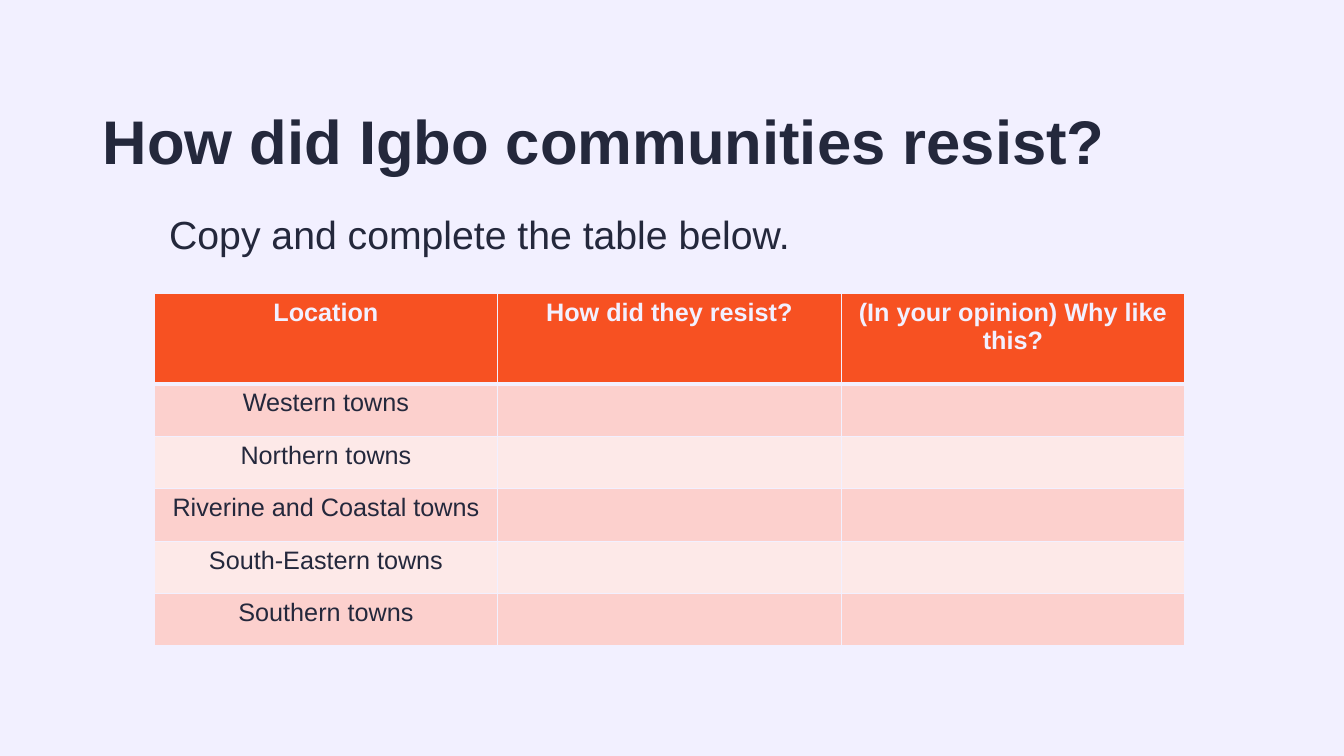
"""Build a slide asking how Igbo communities resisted, with a table to complete."""
import lxml.etree
import pptx
import pptx.dml.color
import pptx.enum.text
import pptx.oxml
import pptx.oxml.ns
import pptx.util

Inches = pptx.util.Inches
Pt = pptx.util.Pt
ANCHOR = pptx.enum.text.MSO_ANCHOR
ALIGN = pptx.enum.text.PP_ALIGN
PALE, DARK, ORANGE = "F2F0FF", "24283C", "F75122"
BANDS = ["FCD0CD", "FDE9E8"]


def color(hex_code):
    return pptx.dml.color.RGBColor.from_string(hex_code)


def write(para, text, size, hex_code, bold, layout):
    for name, value in layout.items():
        setattr(para, name, value)
    span = para.add_run()
    span.text = text
    formats = {"name": "Arial", "size": Pt(size), "bold": bold}
    for name, value in formats.items():
        setattr(span.font, name, value)
    span.font.color.rgb = color(hex_code)


deck = pptx.Presentation()
deck.slide_width, deck.slide_height = Inches(13.33), Inches(7.5)
page = deck.slides.add_slide(deck.slide_layouts[6])
page.background.fill.solid()
page.background.fill.fore_color.rgb = color(PALE)

headings = [
    ("How did Igbo communities resist?", (0.92, 0.71, 11.5, 1.45), 44, True, ANCHOR.MIDDLE),
    ("Copy and complete the table below.", (1.58, 1.71, 10.17, 0.9), 28, False, ANCHOR.BOTTOM),
]
for text, place, size, bold, anchor in headings:
    box = page.shapes.add_textbox(*map(Inches, place))
    box.text_frame.word_wrap = True
    box.text_frame.vertical_anchor = anchor
    write(box.text_frame.paragraphs[0], text, size, DARK, bold, {"line_spacing": 0.9})

rows = [
    ["Location", "How did they resist?", "(In your opinion) Why like this?"],
    ["Western towns", "", ""],
    ["Northern towns", "", ""],
    ["Riverine and Coastal towns", "", ""],
    ["South-Eastern towns", "", ""],
    ["Southern towns", "", ""],
]
table = page.shapes.add_table(
    len(rows), 3, Inches(1.53), Inches(2.91), Inches(10.22), Inches(3.5)
).table
for column in table.columns:
    column.width = Inches(10.22 / 3)

for row_index, texts in enumerate(rows):
    header = row_index == 0
    table.rows[row_index].height = Inches(0.9 if header else 0.52)
    widths = {"L": 1, "R": 1, "T": 3 if row_index == 1 else 1, "B": 3 if header else 1}
    for column_index, text in enumerate(texts):
        cell = table.cell(row_index, column_index)
        properties = cell._tc.get_or_add_tcPr()
        for side, width in widths.items():
            properties.append(pptx.oxml.parse_xml(
                f'<a:ln{side} {pptx.oxml.ns.nsdecls("a")} w="{Pt(width)}">'
                f'<a:solidFill><a:srgbClr val="{PALE}"/></a:solidFill></a:ln{side}>'
            ))
        cell.fill.solid()
        cell.fill.fore_color.rgb = color(ORANGE if header else BANDS[(row_index - 1) % 2])
        if text:
            write(cell.text_frame.paragraphs[0], text, 18, PALE if header else DARK,
                  header, {"alignment": ALIGN.CENTER})

deck.save("out.pptx")
